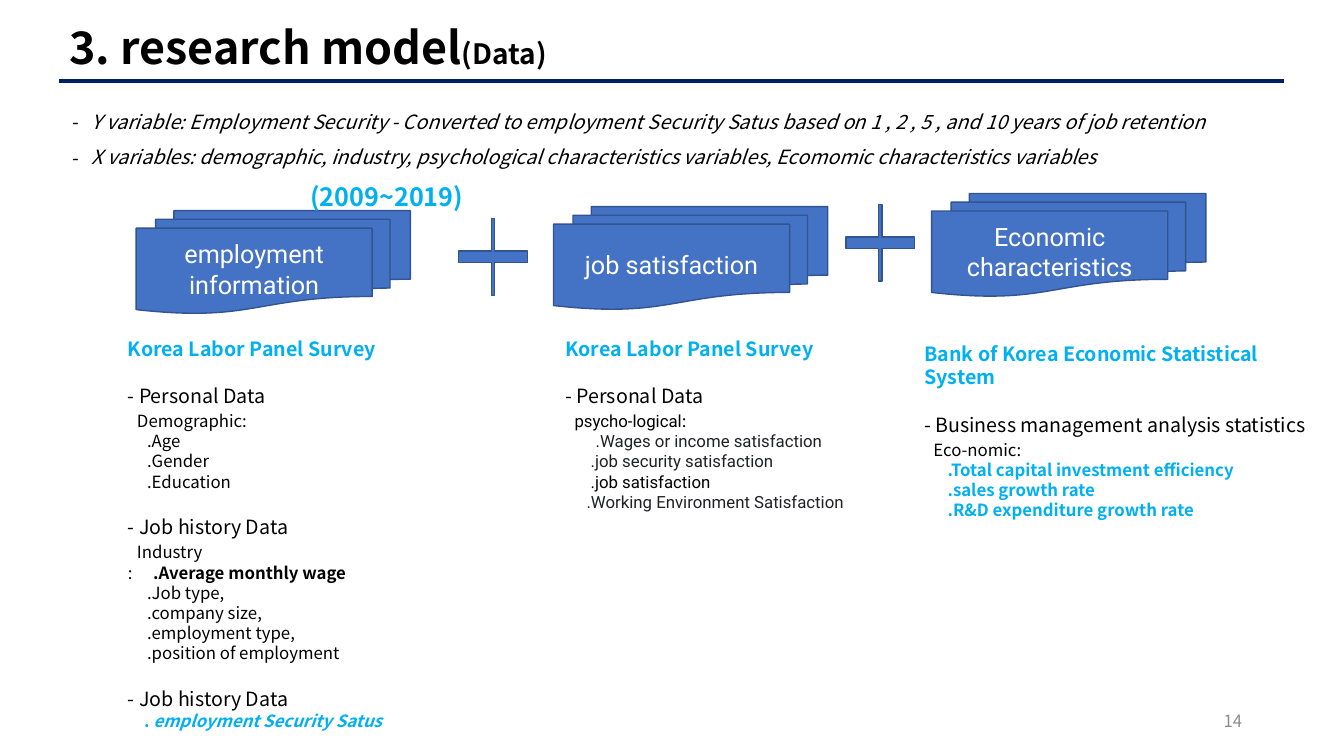
import pptx
import pptx.util
import pptx.dml.color
import pptx.enum.shapes
import pptx.enum.text
import pptx.oxml
import lxml.etree

Inches, Pt = pptx.util.Inches, pptx.util.Pt
SHAPE = pptx.enum.shapes.MSO_SHAPE
ALIGN = pptx.enum.text.PP_ALIGN
ANCHOR = pptx.enum.text.MSO_ANCHOR
NOTO, ROBOTO = "Noto Sans CJK KR", "Roboto"
BLACK, CYAN, BLUE, EDGE, GREY = "000000", "00B0F0", "4472C4", "325491", "202124"
A = "http://schemas.openxmlformats.org/drawingml/2006/main"


def paint(target, color):
    if hasattr(target, "solid"):
        target.solid()
        target = target.fore_color
    elif hasattr(target, "color"):
        target = target.color
    target.rgb = pptx.dml.color.RGBColor.from_string(color)


def write(paragraph, text, size, color=BLACK, bold=False, italic=False, name=NOTO):
    run = paragraph.add_run()
    run.text = text
    run.font.size = Pt(size)
    run.font.name = name
    run.font.bold = bold
    run.font.italic = italic
    paint(run.font.color, color)


deck = pptx.Presentation()
deck.slide_width, deck.slide_height = Inches(13.33), Inches(7.5)
slide = deck.slides.add_slide(deck.slide_layouts[6])
shapes = slide.shapes

rule = shapes.add_connector(
    pptx.enum.shapes.MSO_CONNECTOR.STRAIGHT, Inches(0.59), Inches(0.8), Inches(12.73), Inches(0.8))
paint(rule.line, "002060")
rule.line.width = Pt(3)
lxml.etree.SubElement(rule._element.spPr, f"{{{A}}}effectLst")

title = shapes.add_shape(SHAPE.RECTANGLE, Inches(0.59), Inches(0.26), Inches(10.04), Inches(0.47))
title.shadow.inherit = False
paint(title.fill, "FFFFFF")
title.line.fill.background()
title.text_frame.vertical_anchor = ANCHOR.MIDDLE
heading = title.text_frame.paragraphs[0]
heading.alignment = ALIGN.LEFT
heading.line_spacing = 0.9
write(heading, "3. research model", 32, bold=True)
write(heading, "(Data)", 20, bold=True)

page_number = shapes.add_textbox(Inches(9.42), Inches(6.95), Inches(3), Inches(0.4)).text_frame
page_number.word_wrap = True
page_number.vertical_anchor = ANCHOR.MIDDLE
page_number.paragraphs[0].alignment = ALIGN.RIGHT
write(page_number.paragraphs[0], "14", 12, "8C8C8C")

sources = [
    (1.35, 2.09, "employment information"),
    (5.49, 2.05, "job satisfaction"),
    (9.24, 1.92, "Economic characteristics"),
]
for left, top, label in sources:
    source = shapes.add_shape(
        SHAPE.FLOWCHART_MULTIDOCUMENT, Inches(left), Inches(top), Inches(2.72), Inches(1.02))
    source.shadow.inherit = False
    paint(source.fill, BLUE)
    paint(source.line, EDGE)
    source.line.width = Pt(1)
    source.text_frame.vertical_anchor = ANCHOR.MIDDLE
    source.text_frame.paragraphs[0].alignment = ALIGN.CENTER
    write(source.text_frame.paragraphs[0], label, 18, "FFFFFF", name=ROBOTO)

for left, top in [(8.39, 2.03), (4.55, 2.17)]:
    plus = shapes.add_shape(SHAPE.CROSS, Inches(left), Inches(top), Inches(0.68), Inches(0.76))
    plus.adjustments[0] = 0.474
    plus.shadow.inherit = False
    paint(plus.fill, BLUE)
    paint(plus.line, EDGE)
    plus.line.width = Pt(1)

key = dict(color=CYAN, bold=True)
LEVELS = {"head": (14, 0), "group": (14, 17), "sub": (12, 2.4), "item": (12, 0)}
columns = [
    (5.51, 3.29, 3.56, 1.85, [
        ("head", 0, [("Korea Labor Panel Survey", key)]),
        ("group", 0, [("- Personal Data", {})]),
        ("sub", 0.09, [("psycho-logical", dict(name=ROBOTO)), (":", {})]),
        ("item", 0.3, [(".Wages or income satisfaction", dict(color=GREY, name=ROBOTO))]),
        ("item", 0.25, [(".job security satisfaction", dict(color=GREY, name=ROBOTO))]),
        ("item", 0.25, [(".job satisfaction", dict(name=ROBOTO))]),
        ("item", 0.21, [(".Working Environment Satisfaction", dict(color=GREY, name=ROBOTO))]),
    ]),
    (1.17, 3.29, 4.55, 4.04, [
        ("head", 0, [("Korea Labor Panel Survey", key)]),
        ("group", 0, [("- Personal Data", {})]),
        ("sub", 0.09, [("Demographic:", {})]),
        ("item", 0.19, [(".Age", {})]),
        ("item", 0.19, [(".Gender", {})]),
        ("item", 0.19, [(".Education", {})]),
        ("group", 0, [("- Job history Data", {})]),
        ("sub", 0.09, [("Industry", {})]),
        ("item", 0, [(":\t", {}), (".Average monthly wage", dict(bold=True))]),
        ("item", 0.19, [(".Job type,", {})]),
        ("item", 0.19, [(".company size,", {})]),
        ("item", 0.19, [(".employment type,", {})]),
        ("item", 0.19, [(".position of employment", {})]),
        ("group", 0, [("- Job history Data", {})]),
        ("item", 0.16, [(". ", key), ("employment Security Satus", dict(key, italic=True))]),
    ]),
    (9.07, 3.34, 4.16, 1.88, [
        ("head", 0, [("Bank of Korea Economic Statistical System", key)]),
        ("group", 0, [("- Business management analysis statistics", {})]),
        ("sub", 0.09, [("Eco-nomic:", {})]),
        ("item", 0.23, [(".Total capital investment efficiency", key)]),
        ("item", 0.23, [(".sales growth rate", key)]),
        ("item", 0.23, [(".R&D expenditure growth rate", key)]),
    ]),
]
for left, top, width, height, rows in columns:
    column = shapes.add_textbox(Inches(left), Inches(top), Inches(width), Inches(height)).text_frame
    column.word_wrap = True
    for index, (level, indent, parts) in enumerate(rows):
        row = column.add_paragraph() if index else column.paragraphs[0]
        size, gap = LEVELS[level]
        if gap:
            row.space_before = Pt(gap)
        properties = row._p.get_or_add_pPr()
        properties.set("marL", str(Inches(indent)))
        if parts[0][0].endswith("\t"):
            tabs = lxml.etree.SubElement(properties, f"{{{A}}}tabLst")
            lxml.etree.SubElement(tabs, f"{{{A}}}tab", pos=str(Inches(0.25)), algn="l")
        for text, look in parts:
            write(row, text, size, **look)

variables = shapes.add_textbox(Inches(0.62), Inches(0.92), Inches(11.94), Inches(0.76)).text_frame
variables.word_wrap = True
definitions = [
    "Y variable: Employment Security - Converted to employment Security Satus based on 1 , 2 , 5 , and 10 years of job retention",
    "X variables: demographic, industry, psychological characteristics variables, Ecomomic characteristics variables",
]
for index, definition in enumerate(definitions):
    line = variables.add_paragraph() if index else variables.paragraphs[0]
    line.line_spacing = 1.5
    properties = line._p.get_or_add_pPr()
    properties.set("marL", str(Inches(0.19)))
    properties.set("indent", str(Inches(-0.19)))
    lxml.etree.SubElement(properties, f"{{{A}}}buFont", typeface=NOTO)
    lxml.etree.SubElement(properties, f"{{{A}}}buChar", char="-")
    write(line, definition, 14, italic=True)

period = shapes.add_textbox(Inches(2.98), Inches(1.75), Inches(1.83), Inches(0.71)).text_frame
period.word_wrap = True
write(period.paragraphs[0], "(2009~2019)", 18, CYAN, bold=True)

deck.save("out.pptx")
